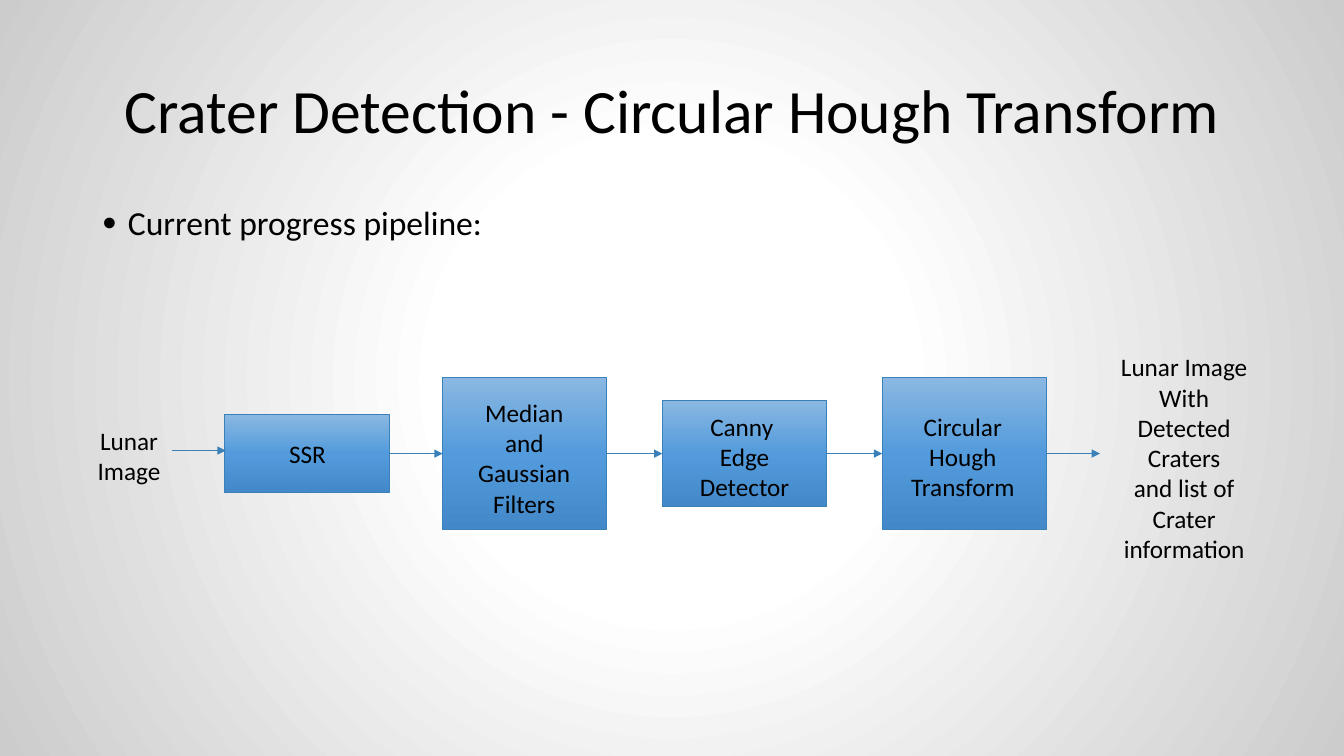
from dataclasses import dataclass
from itertools import pairwise

from lxml.etree import SubElement
from pptx import Presentation
from pptx.dml.color import RGBColor
from pptx.enum.shapes import MSO_CONNECTOR, MSO_SHAPE
from pptx.enum.text import MSO_ANCHOR, PP_ALIGN
from pptx.oxml import parse_xml
from pptx.oxml.ns import nsdecls, qn
from pptx.shapes.autoshape import Shape
from pptx.shapes.connector import Connector
from pptx.slide import Slide
from pptx.util import Inches, Pt

Stops = tuple[tuple[int, str], ...]


@dataclass(frozen=True)
class Theme:
    font: str = "Calibri"
    text: str = "000000"
    line: str = "3A81BA"
    line_width: float = 0.75
    title_size: int = 44
    body_size: int = 24
    label_size: int = 18
    box_stops: Stops = ((0, "8AB8E2"), (50, "539BDC"), (100, "4389C9"))
    background_stops: Stops = ((0, "FFFFFF"), (30, "FFFFFF"), (100, "CCCCCC"))


@dataclass(frozen=True)
class Label:
    lines: tuple[str, ...]
    left: float
    top: float
    width: float
    height: float
    size: int
    align: PP_ALIGN = PP_ALIGN.CENTER
    anchor: MSO_ANCHOR = MSO_ANCHOR.TOP
    line_spacing: float = 1.0


@dataclass(frozen=True)
class Stage:
    left: float
    height: float
    label: Label


THEME = Theme()
AXIS = 4.5
STAGE_WIDTH = 1.63
ARROW_LENGTH = 0.53
LINEAR = '<a:lin ang="5400000" scaled="0"/>'
CIRCULAR = ('<a:path path="circle"><a:fillToRect l="50000" t="50000" '
            'r="50000" b="50000"/></a:path>')

TITLE = Label(("Crater Detection - Circular Hough Transform",), 0.92, 0.4, 11.5, 1.45,
              THEME.title_size, anchor=MSO_ANCHOR.MIDDLE, line_spacing=0.9)
BODY = Label(("Current progress pipeline:",), 0.92, 2, 11.5, 1.05,
             THEME.body_size, PP_ALIGN.LEFT, line_spacing=0.9)
SOURCE = Label(("Lunar Image",), 0.75, 4.17, 1.06, 0.71, THEME.label_size)
RESULT = Label(("Lunar Image", "With Detected Craters", "and list of Crater information"),
               10.93, 3.44, 1.63, 2.21, THEME.label_size)
STAGES = (
    Stage(2.23, 0.77, Label(("SSR",), 2.43, 4.3, 1.24, 0.4, THEME.label_size)),
    Stage(4.39, 1.5, Label(("Median and Gaussian Filters",),
                           4.58, 3.89, 1.24, 1.31, THEME.label_size)),
    Stage(6.57, 1.05, Label(("Canny ", "Edge Detector"),
                            6.57, 4.03, 1.63, 1.01, THEME.label_size)),
    Stage(8.75, 1.5, Label(("Circular", "Hough", "Transform"),
                           8.88, 4.03, 1.34, 1.01, THEME.label_size)),
)


def replace_solid_fill(element, stops: Stops, direction: str) -> None:
    """Swap the first solid fill under the element for a gradient."""
    stop_xml = "".join(
        f'<a:gs pos="{position * 1000}"><a:srgbClr val="{color}"/></a:gs>'
        for position, color in stops)
    gradient = parse_xml(f'<a:gradFill {nsdecls("a")} rotWithShape="1">'
                         f'<a:gsLst>{stop_xml}</a:gsLst>{direction}</a:gradFill>')
    solid = next(element.iter(qn("a:solidFill")))
    solid.getparent().replace(solid, gradient)


def paint_background(slide: Slide) -> None:
    slide.background.fill.solid()
    slide.background.fill.fore_color.rgb = RGBColor.from_string("FFFFFF")
    replace_solid_fill(slide.element, THEME.background_stops, CIRCULAR)


def add_label(slide: Slide, label: Label) -> Shape:
    shape = slide.shapes.add_textbox(Inches(label.left), Inches(label.top),
                                     Inches(label.width), Inches(label.height))
    frame = shape.text_frame
    frame.word_wrap = True
    frame.vertical_anchor = label.anchor
    for index, line in enumerate(label.lines):
        paragraph = frame.add_paragraph() if index else frame.paragraphs[0]
        paragraph.alignment = label.align
        paragraph.line_spacing = label.line_spacing
        run = paragraph.add_run()
        run.text = line
        run.font.name = THEME.font
        run.font.size = Pt(label.size)
        run.font.color.rgb = RGBColor.from_string(THEME.text)
    return shape


def add_bullet(shape: Shape) -> None:
    properties = shape.text_frame.paragraphs[0]._p.get_or_add_pPr()
    properties.set("marL", str(Inches(0.25)))
    properties.set("indent", str(Inches(-0.25)))
    color = SubElement(properties, qn("a:buClr"))
    SubElement(color, qn("a:srgbClr"), val=THEME.text)
    SubElement(properties, qn("a:buSzPct"), val="117000")
    SubElement(properties, qn("a:buFont"), typeface="Arial")
    SubElement(properties, qn("a:buChar"), char="•")


def add_stage(slide: Slide, stage: Stage) -> Shape:
    box = slide.shapes.add_shape(
        MSO_SHAPE.RECTANGLE, Inches(stage.left), Inches(AXIS - stage.height / 2),
        Inches(STAGE_WIDTH), Inches(stage.height))
    box.shadow.inherit = False
    box.fill.solid()
    box.fill.fore_color.rgb = RGBColor.from_string(THEME.line)
    replace_solid_fill(box.element.spPr, THEME.box_stops, LINEAR)
    box.line.color.rgb = RGBColor.from_string(THEME.line)
    box.line.width = Pt(THEME.line_width)
    add_label(slide, stage.label)
    return box


def add_arrow(slide: Slide, left: float, height: float = AXIS) -> Connector:
    """Draw an arrow to the right, starting at left, at the given height."""
    arrow = slide.shapes.add_connector(
        MSO_CONNECTOR.STRAIGHT, Inches(left), Inches(height),
        Inches(left + ARROW_LENGTH), Inches(height))
    arrow.line.color.rgb = RGBColor.from_string(THEME.line)
    arrow.line.width = Pt(THEME.line_width)
    SubElement(arrow.line._get_or_add_ln(), qn("a:tailEnd"), type="triangle")
    SubElement(arrow._element.spPr, qn("a:effectLst"))
    return arrow


def main() -> None:
    presentation = Presentation()
    presentation.slide_width = Inches(13.33)
    presentation.slide_height = Inches(7.5)
    slide = presentation.slides.add_slide(presentation.slide_layouts[6])
    paint_background(slide)

    add_label(slide, TITLE)
    add_bullet(add_label(slide, BODY))
    add_label(slide, SOURCE)
    add_label(slide, RESULT)

    boxes = [add_stage(slide, stage) for stage in STAGES]
    arrows = [add_arrow(slide, stage.left + STAGE_WIDTH) for stage in STAGES]
    for box, arrow in zip(boxes, arrows):
        arrow.begin_connect(box, 3)
    for arrow, (_, following) in zip(arrows, pairwise(boxes)):
        arrow.end_connect(following, 1)
    add_arrow(slide, 1.71, 4.47)

    presentation.save("out.pptx")


if __name__ == "__main__":
    main()
